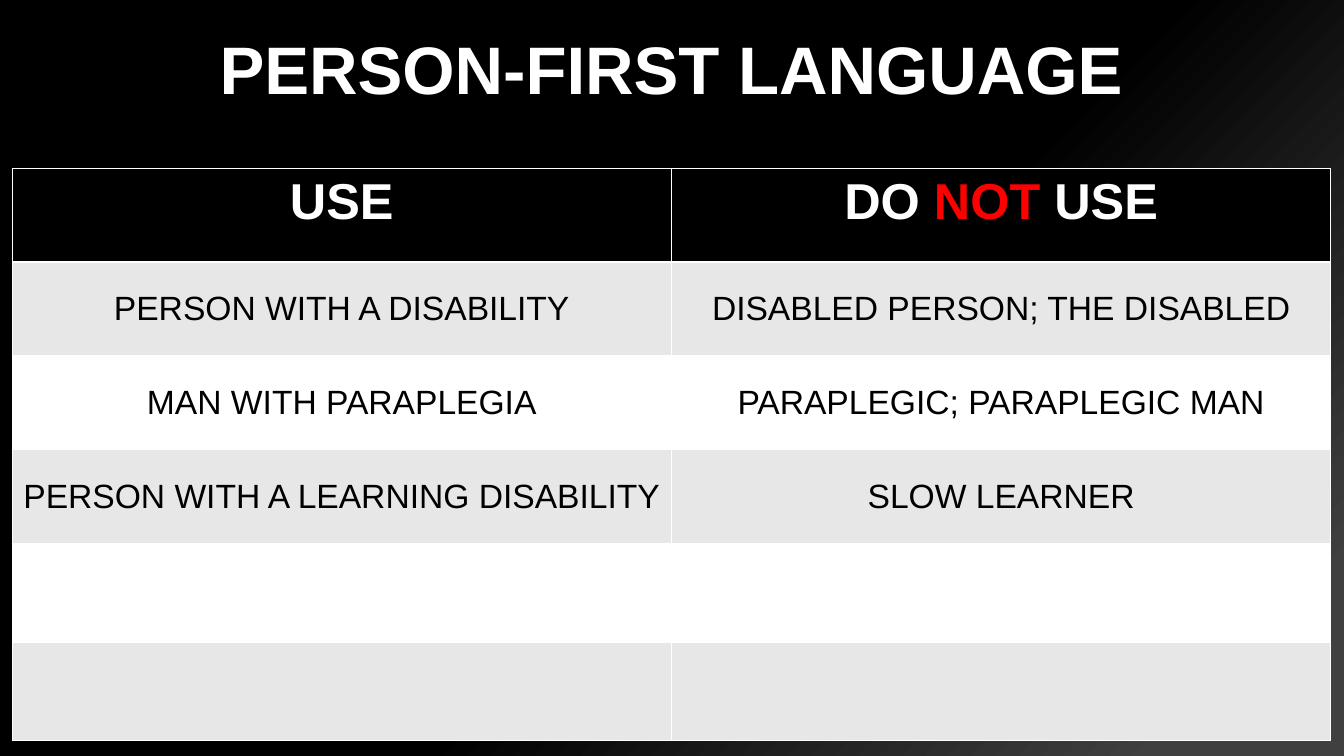
from lxml import etree
from pptx import Presentation
from pptx.dml.color import RGBColor
from pptx.enum.text import MSO_ANCHOR, PP_ALIGN
from pptx.oxml.ns import qn
from pptx.util import Inches, Pt

CENTER = PP_ALIGN.CENTER
TOP = MSO_ANCHOR.TOP
MIDDLE = MSO_ANCHOR.MIDDLE

BLACK = RGBColor(0x00, 0x00, 0x00)
CHARCOAL = RGBColor(0x40, 0x40, 0x40)
WHITE = RGBColor(0xFF, 0xFF, 0xFF)
GREY = RGBColor(0xE7, 0xE7, 0xE7)
RED = RGBColor(0xFF, 0x00, 0x00)

FONT = "Arial"
TITLE_FORMAT = {"name": FONT, "size": Pt(48), "bold": True}
HEADER_FORMAT = {"name": FONT, "size": Pt(36), "bold": True}
BODY_FORMAT = {"name": FONT, "size": Pt(24), "bold": False}

COLUMN_WIDTH = 6.54
ROW_HEIGHTS = [0.93] * 4 + [0.98] * 2
HEADERS = [
    [("USE", WHITE)],
    [("DO ", WHITE), ("NOT", RED), (" USE", WHITE)],
]
TERMS = [
    ("PERSON WITH A DISABILITY", "DISABLED PERSON; THE DISABLED"),
    ("MAN WITH PARAPLEGIA", "PARAPLEGIC; PARAPLEGIC MAN"),
    ("PERSON WITH A LEARNING DISABILITY", "SLOW LEARNER"),
    ("", ""),
    ("", ""),
]


def paint_background(page):
    fill = page.background.fill
    fill.gradient()
    fill.gradient_angle = 315
    stops = [(0.56, BLACK), (0.91, CHARCOAL)]
    for stop, (position, color) in zip(fill.gradient_stops, stops):
        stop.position = position
        stop.color.rgb = color


def write_spans(para, spans, font_format):
    """Fill a centred paragraph with (text, colour) spans in one format."""
    para.alignment = CENTER
    for text, color in spans:
        span = para.add_run()
        span.text = text
        for name, value in font_format.items():
            setattr(span.font, name, value)
        span.font.color.rgb = color


def add_title(page, text):
    title = page.shapes.title
    title.left, title.top = Inches(1), Inches(0)
    title.width, title.height = Inches(11.32), Inches(1.45)
    title.text_frame.vertical_anchor = MIDDLE
    para = title.text_frame.paragraphs[0]
    para.line_spacing = 0.9
    write_spans(para, [(text, WHITE)], TITLE_FORMAT)


def add_borders(cell, color):
    """Draw a one-point line on each side; lines must precede the fill."""
    properties = cell._tc.get_or_add_tcPr()
    for index, side in enumerate(("a:lnL", "a:lnR", "a:lnT", "a:lnB")):
        line = etree.Element(qn(side), w=str(Pt(1)))
        solid = etree.SubElement(line, qn("a:solidFill"))
        etree.SubElement(solid, qn("a:srgbClr"), val=str(color))
        properties.insert(index, line)


def format_cell(cell, spans, font_format, fill_color, anchor):
    cell.fill.solid()
    cell.fill.fore_color.rgb = fill_color
    cell.vertical_anchor = anchor
    add_borders(cell, WHITE)
    write_spans(cell.text_frame.paragraphs[0], spans, font_format)


def add_terms_table(page):
    column_count = len(HEADERS)
    frame = page.shapes.add_table(
        len(ROW_HEIGHTS), column_count, Inches(0.12), Inches(1.67),
        Inches(COLUMN_WIDTH * column_count), Inches(sum(ROW_HEIGHTS)))
    table = frame.table
    for column in table.columns:
        column.width = Inches(COLUMN_WIDTH)
    for row, height in zip(table.rows, ROW_HEIGHTS):
        row.height = Inches(height)

    for column, spans in enumerate(HEADERS):
        format_cell(table.cell(0, column), spans, HEADER_FORMAT, BLACK, TOP)
    for row, terms in enumerate(TERMS, start=1):
        fill_color = GREY if row % 2 else WHITE
        for column, term in enumerate(terms):
            spans = [(term, BLACK)] if term else []
            format_cell(table.cell(row, column), spans, BODY_FORMAT,
                        fill_color, MIDDLE)


def main():
    deck = Presentation()
    deck.slide_width, deck.slide_height = Inches(13.33), Inches(7.5)
    title_only = deck.slide_layouts[5]
    page = deck.slides.add_slide(title_only)
    paint_background(page)
    add_title(page, "PERSON-FIRST LANGUAGE")
    add_terms_table(page)
    deck.save("out.pptx")


if __name__ == "__main__":
    main()
